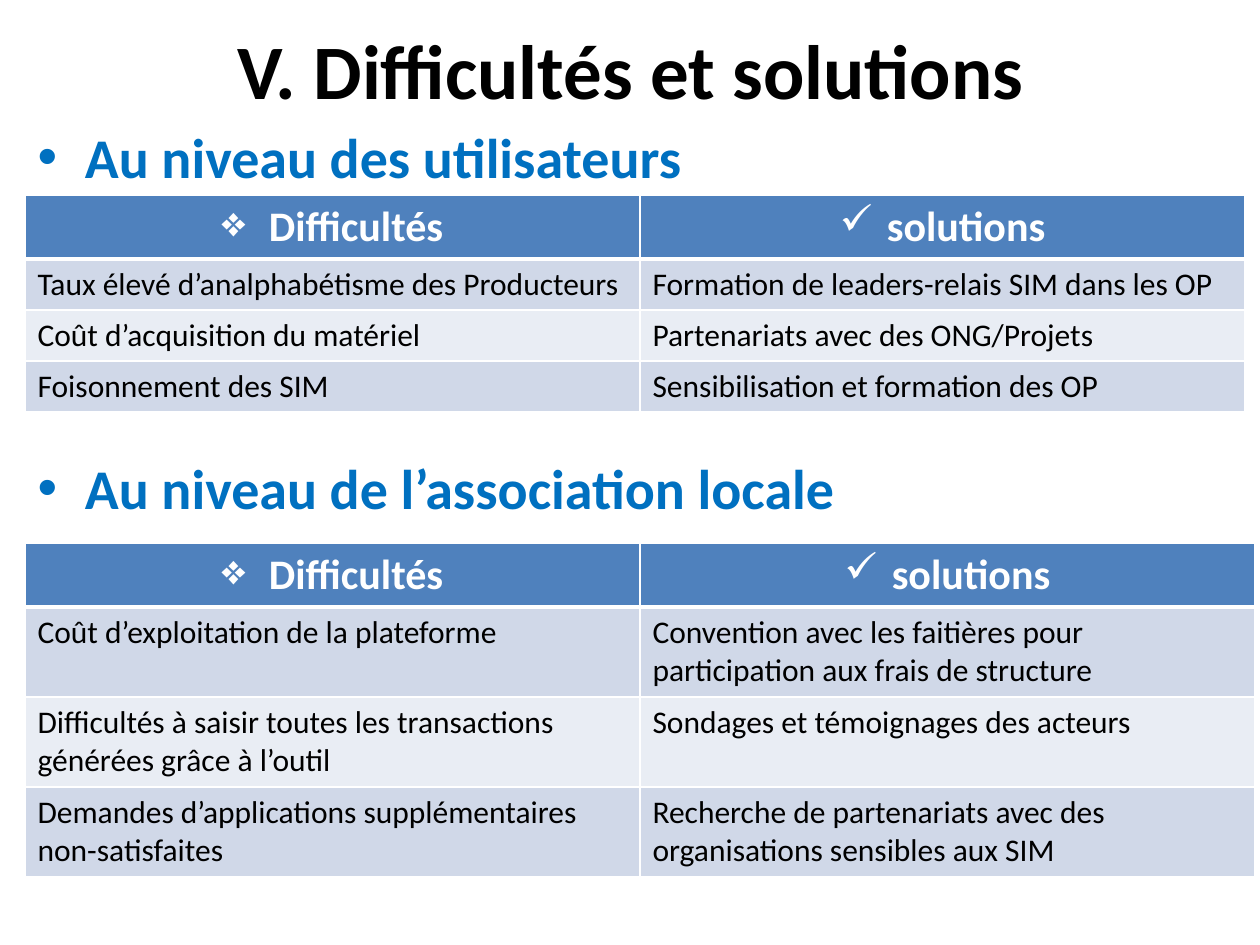
"""Build the slide on difficulties and solutions."""
import pptx
import pptx.dml.color
import pptx.enum.text
import pptx.oxml
import pptx.oxml.ns
import pptx.util

TITLE = "V. Difficultés et solutions"
TITLE_BOX = (64, 3, 1134, 132)
BODY_BOX = (25, 116, 1211, 794)
HEADINGS = [("Au niveau des utilisateurs", 0), ("Au niveau de l’association locale", 151)]
HEADER = [("Difficultés", "❖"), ("solutions", "✓")]
TABLES = [
    {
        "top": 195,
        "columns": [615, 605],
        "heights": [63, 51, 51, 51],
        "rows": [
            ("Taux élevé d’analphabétisme des Producteurs", "Formation de leaders-relais SIM dans les OP"),
            ("Coût d’acquisition du matériel", "Partenariats avec des ONG/Projets"),
            ("Foisonnement des SIM", "Sensibilisation et formation des OP"),
        ],
    },
    {
        "top": 543,
        "columns": [615, 615],
        "heights": [62, 90, 90, 89],
        "rows": [
            ("Coût d’exploitation de la plateforme",
             "Convention avec les faitières pour participation aux frais de structure"),
            ("Difficultés à saisir toutes les transactions générées grâce à l’outil",
             "Sondages et témoignages des acteurs"),
            ("Demandes d’applications supplémentaires non-satisfaites",
             "Recherche de partenariats avec des organisations sensibles aux SIM"),
        ],
    },
]
TABLE_LEFT = 25
BANDS = ["D0D8E8", "E9EDF4"]
HEADER_FILL, WHITE, BLACK, BLUE = "4F81BD", "FFFFFF", "000000", "0070C0"
CENTER = pptx.enum.text.PP_ALIGN.CENTER


def px(length):
    return pptx.util.Emu(round(length * 914400 / 126))


def color(value):
    return pptx.dml.color.RGBColor.from_string(value)


def place(shape, box):
    shape.left, shape.top, shape.width, shape.height = map(px, box)


def style(para, size, hue, bold):
    font = para.font
    font.name, font.size, font.bold = "Calibri", pptx.util.Pt(size), bold
    font.color.rgb = color(hue)


def set_bullet(para, symbol):
    properties = para._p.get_or_add_pPr()
    properties.set("marL", "342900")
    properties.set("indent", "-342900")
    bullet = pptx.oxml.parse_xml(f'<a:buChar {pptx.oxml.ns.nsdecls("a")} char="{symbol}"/>')
    properties.insert(0, bullet)


def set_borders(cell, bottom):
    properties = cell._tc.get_or_add_tcPr()
    for index, (side, width) in enumerate([("L", 1), ("R", 1), ("T", 1), ("B", bottom)]):
        line = pptx.oxml.parse_xml(
            f'<a:ln{side} {pptx.oxml.ns.nsdecls("a")} w="{pptx.util.Pt(width)}">'
            f'<a:solidFill><a:srgbClr val="{WHITE}"/></a:solidFill></a:ln{side}>')
        properties.insert(index, line)


def fill_cell(cell, text, fill, bottom=1):
    cell.text = text
    cell.fill.solid()
    cell.fill.fore_color.rgb = color(fill)
    set_borders(cell, bottom)
    return cell.text_frame.paragraphs[0]


def add_table(slide, data):
    columns, heights, rows = data["columns"], data["heights"], data["rows"]
    box = map(px, (TABLE_LEFT, data["top"], sum(columns), sum(heights)))
    table = slide.shapes.add_table(len(heights), len(columns), *box).table
    for column, width in zip(table.columns, columns):
        column.width = px(width)
    for row, height in zip(table.rows, heights):
        row.height = px(height)
    for index, (text, symbol) in enumerate(HEADER):
        para = fill_cell(table.cell(0, index), text, HEADER_FILL, 3)
        para.alignment = CENTER
        style(para, 24, WHITE, True)
        set_bullet(para, symbol)
    for number, row in enumerate(rows, 1):
        for index, text in enumerate(row):
            para = fill_cell(table.cell(number, index), text, BANDS[(number - 1) % 2])
            style(para, 18, BLACK, False)


def main():
    deck = pptx.Presentation()
    deck.slide_width, deck.slide_height = px(1260), px(945)
    slide = deck.slides.add_slide(deck.slide_layouts[1])
    title, body = slide.placeholders
    place(title, TITLE_BOX)
    title.text_frame.text = TITLE
    para = title.text_frame.paragraphs[0]
    para.alignment = CENTER
    style(para, 44, BLACK, True)
    place(body, BODY_BOX)
    frame = body.text_frame
    frame.text = "\n".join(text for text, gap in HEADINGS)
    for para, (text, gap) in zip(frame.paragraphs, HEADINGS):
        para.space_before = pptx.util.Pt(gap)
        style(para, 32, BLUE, True)
    for data in TABLES:
        add_table(slide, data)
    deck.save("out.pptx")


if __name__ == "__main__":
    main()
